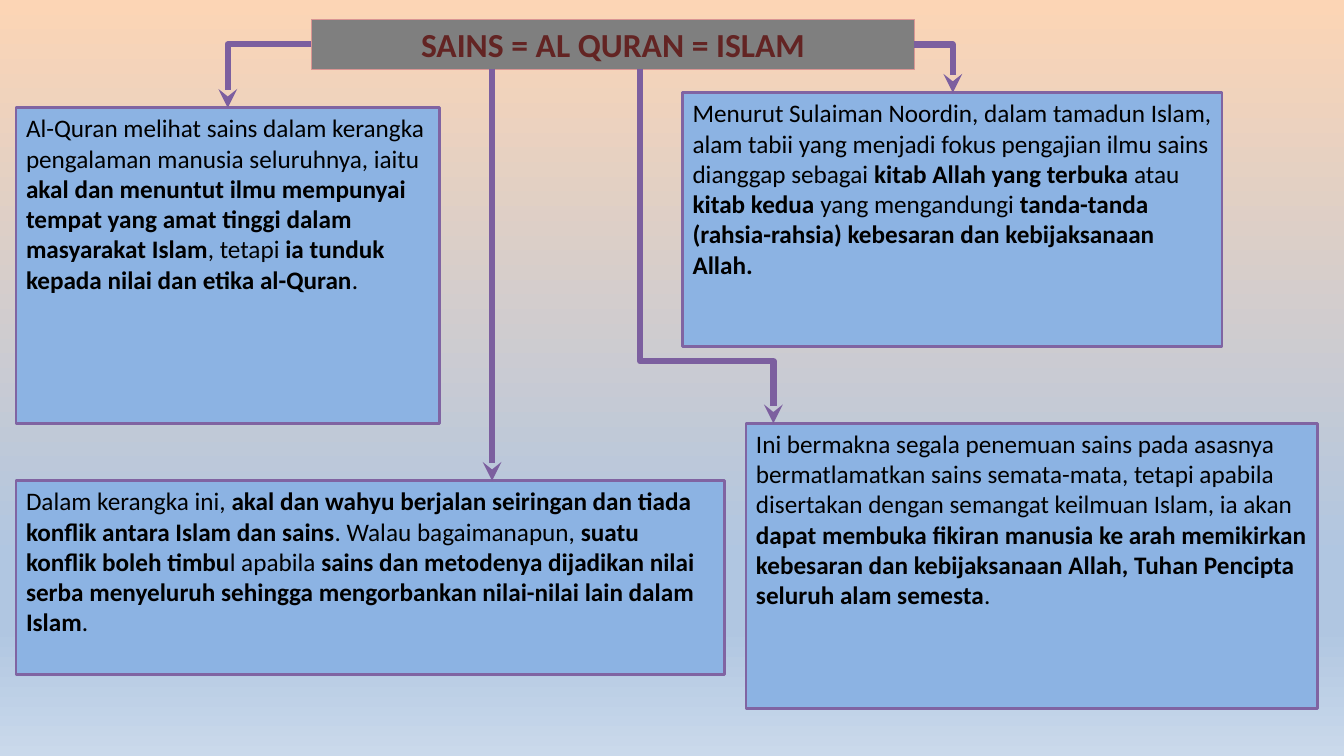
"""Build the slide relating science, the Quran and Islam."""
from lxml import etree
from pptx import Presentation
from pptx.dml.color import RGBColor
from pptx.enum.shapes import MSO_CONNECTOR, MSO_SHAPE
from pptx.enum.text import MSO_ANCHOR, PP_ALIGN
from pptx.oxml import parse_xml
from pptx.oxml.ns import nsdecls, qn
from pptx.util import Pt

RECTANGLE = MSO_SHAPE.RECTANGLE
STRAIGHT, ELBOW = MSO_CONNECTOR.STRAIGHT, MSO_CONNECTOR.ELBOW
TOP, LEFT, CENTER = MSO_ANCHOR.TOP, PP_ALIGN.LEFT, PP_ALIGN.CENTER

PX = 9144
SIZE = (1333, 750)
BACKGROUND = [(0, "FCD5B5"), (74, "B0C6E1"), (83, "B0C6E1"), (100, "CAD9EB")]
ARROW_COLOR = "7C5F9F"
BODY = {"fill": "8CB3E3", "line": "8064A2", "width": 2, "align": LEFT,
        "font": {"size": Pt(18), "name": "Calibri"}, "color": "000000"}
TITLE = {"fill": "7F7F7F", "line": "D99593", "width": 0.75, "align": CENTER,
         "font": {"size": Pt(24), "name": "Calibri"}, "color": "632423"}

# Each text alternates plain and bold spans, starting with plain.
BOXES = [
    ((16, 107, 420, 313), BODY, [
        "Al-Quran melihat sains dalam kerangka pengalaman manusia seluruhnya, iaitu ",
        "akal dan menuntut ilmu mempunyai tempat yang amat tinggi dalam masyarakat Islam",
        ", tetapi ", "ia tunduk kepada nilai dan etika al-Quran", "."]),
    ((16, 477, 703, 192), BODY, [
        "Dalam kerangka ini, ",
        "akal dan wahyu berjalan seiringan dan tiada konflik antara Islam dan sains",
        ". Walau bagaimanapun, ", "suatu konflik boleh timbu", "l apabila ",
        "sains dan metodenya dijadikan nilai serba menyeluruh sehingga mengorbankan "
        "nilai-nilai lain dalam Islam", "."]),
    ((677, 92, 535, 252), BODY, [
        "Menurut Sulaiman Noordin, dalam tamadun Islam, alam tabii yang menjadi fokus "
        "pengajian ilmu sains dianggap sebagai ",
        "kitab Allah yang terbuka ", "atau ", "kitab kedua ", "yang mengandungi ",
        "tanda-tanda (rahsia-rahsia) kebesaran dan kebijaksanaan Allah."]),
    ((740, 420, 567, 283), BODY, [
        "Ini bermakna segala penemuan sains pada asasnya bermatlamatkan sains semata-mata, "
        "tetapi apabila disertakan dengan semangat keilmuan Islam, ia akan ",
        "dapat membuka fikiran manusia ke arah memikirkan kebesaran dan kebijaksanaan "
        "Allah, Tuhan Pencipta seluruh alam semesta", "."]),
    ((309, 19, 598, 50), TITLE, ["", "SAINS = AL QURAN = ISLAM"]),
]
CORNER_ARROWS = [((309, 44), (226, 107)), ((907, 44), (945, 92))]
STEP_ARROW = ((635, 68), (767, 420), 82500)
STRAIGHT_ARROW = ((488, 68), (488, 477))


def color(value):
    """Return the colour for a hex string."""
    return RGBColor.from_string(value)


def paint_background(page):
    """Fill the page with the vertical gradient."""
    stops = "".join(f'<a:gs pos="{at * 1000}"><a:srgbClr val="{value}"/></a:gs>'
                    for at, value in BACKGROUND)
    page.element.cSld.insert(0, parse_xml(
        f'<p:bg {nsdecls("p", "a")}><p:bgPr><a:gradFill rotWithShape="1">'
        f'<a:gsLst>{stops}</a:gsLst><a:lin ang="5400000" scaled="0"/></a:gradFill>'
        '<a:effectLst/></p:bgPr></p:bg>'))


def add_box(page, place, style, texts):
    """Add a filled rectangle with alternating plain and bold spans."""
    box = page.shapes.add_shape(RECTANGLE, *(length * PX for length in place))
    box.shadow.inherit = False
    box.fill.solid()
    box.fill.fore_color.rgb = color(style["fill"])
    box.line.color.rgb = color(style["line"])
    box.line.width = Pt(style["width"])
    frame = box.text_frame
    frame.word_wrap = True
    frame.vertical_anchor = TOP
    para = frame.paragraphs[0]
    para.alignment = style["align"]
    for index, text in enumerate(texts):
        if not text:
            continue
        span = para.add_run()
        span.text = text
        for name, value in style["font"].items():
            setattr(span.font, name, value)
        span.font.bold = index % 2 == 1
        span.font.color.rgb = color(style["color"])


def add_arrow(page, kind, start, end):
    """Add a thick connector with a stealth head at its end."""
    arrow = page.shapes.add_connector(kind, *(round(at * PX) for at in (*start, *end)))
    arrow.line.color.rgb = color(ARROW_COLOR)
    arrow.line.width = Pt(4.5)
    properties = arrow._element.spPr
    outline = properties.find(qn("a:ln"))
    etree.SubElement(outline, qn("a:tailEnd"), type="stealth")
    etree.SubElement(properties, qn("a:effectLst"))
    return properties


def add_corner_arrow(page, start, end):
    """Add an arrow that runs sideways, then down."""
    properties = add_arrow(page, ELBOW, start, end)
    properties.find(qn("a:prstGeom")).set("prst", "bentConnector2")


def add_step_arrow(page, start, end, bend):
    """Add an arrow that runs down, sideways and down by turning a flipped elbow."""
    middle_x, middle_y = ((a + b) / 2 for a, b in zip(start, end))
    half_x, half_y = ((b - a) / 2 for a, b in zip(start, end))
    properties = add_arrow(page, ELBOW, (middle_x + half_y, middle_y - half_x),
                           (middle_x - half_y, middle_y + half_x))
    properties.find(qn("a:xfrm")).set("rot", str(270 * 60000))
    guides = properties.find(qn("a:prstGeom")).find(qn("a:avLst"))
    etree.SubElement(guides, qn("a:gd"), name="adj1", fmla=f"val {bend}")


def main():
    """Build and save the deck."""
    deck = Presentation()
    deck.slide_width, deck.slide_height = (length * PX for length in SIZE)
    page = deck.slides.add_slide(deck.slide_layouts[6])
    paint_background(page)
    for place, style, texts in BOXES:
        add_box(page, place, style, texts)
    for start, end in CORNER_ARROWS:
        add_corner_arrow(page, start, end)
    add_step_arrow(page, *STEP_ARROW)
    add_arrow(page, STRAIGHT, *STRAIGHT_ARROW)
    deck.save("out.pptx")


if __name__ == "__main__":
    main()
